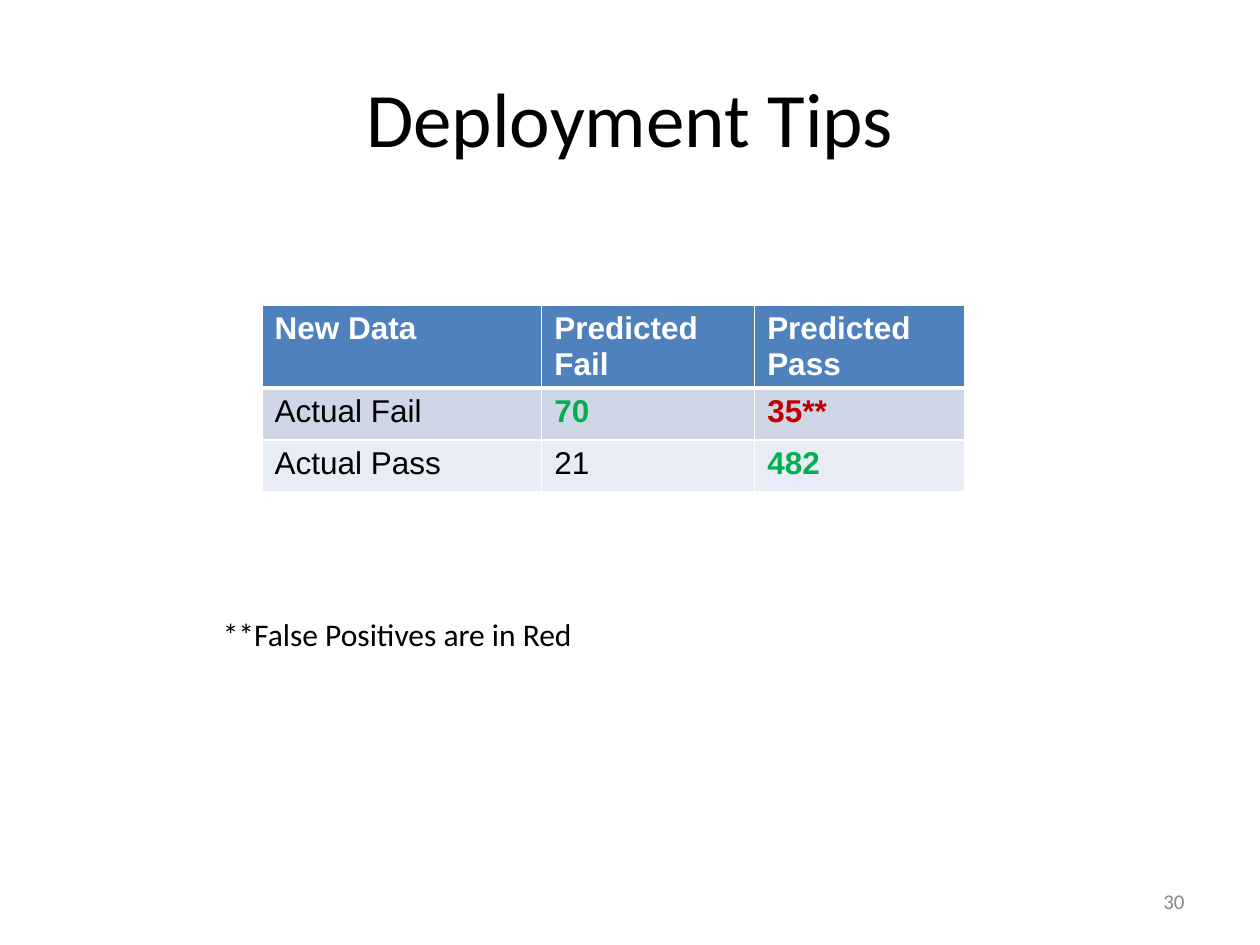
from dataclasses import dataclass

import pptx
import pptx.dml.color
import pptx.enum.text
import pptx.oxml.ns
import pptx.util
from lxml import etree

Inches = pptx.util.Inches
Pt = pptx.util.Pt
RGBColor = pptx.dml.color.RGBColor
Align = pptx.enum.text.PP_ALIGN
Anchor = pptx.enum.text.MSO_ANCHOR

BLACK = RGBColor(0x00, 0x00, 0x00)
WHITE = RGBColor(0xFF, 0xFF, 0xFF)
GRAY = RGBColor(0x88, 0x88, 0x88)
HEADER_BLUE = RGBColor(0x4F, 0x81, 0xBD)
BAND_DARK = RGBColor(0xCF, 0xD7, 0xE7)
BAND_LIGHT = RGBColor(0xE8, 0xEC, 0xF4)
CORRECT_GREEN = RGBColor(0x00, 0xB0, 0x50)
FALSE_POSITIVE_RED = RGBColor(0xC0, 0x00, 0x00)


@dataclass(frozen=True)
class Entry:
    text: str
    color: RGBColor = BLACK
    bold: bool = False


@dataclass(frozen=True)
class Row:
    fill: RGBColor
    height: float
    entries: tuple[Entry, ...]


@dataclass(frozen=True)
class Label:
    text: str
    left: float
    top: float
    width: float
    height: float
    size: int
    color: RGBColor
    align: Align
    anchor: Anchor


COLUMN_WIDTHS = (2.22, 1.69, 1.67)
CONFUSION_MATRIX = (
    Row(HEADER_BLUE, 0.65, tuple(
        Entry(heading, WHITE, True)
        for heading in ("New Data", "Predicted Fail", "Predicted Pass"))),
    Row(BAND_DARK, 0.41, (
        Entry("Actual Fail"),
        Entry("70", CORRECT_GREEN, True),
        Entry("35**", FALSE_POSITIVE_RED, True))),
    Row(BAND_LIGHT, 0.41, (
        Entry("Actual Pass"),
        Entry("21"),
        Entry("482", CORRECT_GREEN, True))),
)
LABELS = (
    Label("30", 7.17, 6.95, 2.33, 0.4, 12, GRAY, Align.RIGHT, Anchor.MIDDLE),
    Label("**False Positives are in Red", 1.67, 4.83, 3, 0.4, 18, BLACK,
          Align.LEFT, Anchor.TOP),
)


def add_run(paragraph, text: str, font: str, size: int, color: RGBColor,
            bold: bool = False) -> None:
    run = paragraph.add_run()
    run.text = text
    run.font.name = font
    run.font.size = Pt(size)
    run.font.bold = bold
    run.font.color.rgb = color


def add_border(cell, side: str, points: float) -> None:
    """Add a white line; sides go in the order L, R, T, B, before the fill."""
    qn = pptx.oxml.ns.qn
    line = etree.SubElement(cell._tc.get_or_add_tcPr(), qn(f"a:ln{side}"),
                            w=str(Pt(points)))
    solid = etree.SubElement(line, qn("a:solidFill"))
    etree.SubElement(solid, qn("a:srgbClr"), val=str(WHITE))


def add_title(slide, text: str) -> None:
    title = slide.shapes.title
    title.left, title.top = Inches(0.5), Inches(0.3)
    title.width, title.height = Inches(9), Inches(1.25)
    title.text_frame.vertical_anchor = Anchor.MIDDLE
    heading = title.text_frame.paragraphs[0]
    heading.alignment = Align.CENTER
    add_run(heading, text, "Calibri", 44, BLACK)


def add_matrix(slide, rows: tuple[Row, ...]) -> None:
    matrix = slide.shapes.add_table(
        len(rows), len(COLUMN_WIDTHS), Inches(2.08), Inches(2.42),
        Inches(sum(COLUMN_WIDTHS)), Inches(sum(row.height for row in rows))).table
    for column, width in zip(matrix.columns, COLUMN_WIDTHS):
        column.width = Inches(width)
    for row_index, row in enumerate(rows):
        matrix.rows[row_index].height = Inches(row.height)
        borders = {"L": 1, "R": 1,
                   "T": 3 if row_index == 1 else 1,
                   "B": 3 if row_index == 0 else 1}
        for column_index, entry in enumerate(row.entries):
            cell = matrix.cell(row_index, column_index)
            for side, points in borders.items():
                add_border(cell, side, points)
            cell.fill.solid()
            cell.fill.fore_color.rgb = row.fill
            add_run(cell.text_frame.paragraphs[0], entry.text, "Arial", 18,
                    entry.color, entry.bold)


def add_label(slide, label: Label) -> None:
    frame = slide.shapes.add_textbox(
        Inches(label.left), Inches(label.top),
        Inches(label.width), Inches(label.height)).text_frame
    frame.word_wrap = True
    frame.vertical_anchor = label.anchor
    paragraph = frame.paragraphs[0]
    paragraph.alignment = label.align
    add_run(paragraph, label.text, "Calibri", label.size, label.color)


def main() -> None:
    deck = pptx.Presentation()
    deck.slide_width, deck.slide_height = Inches(10), Inches(7.5)
    slide = deck.slides.add_slide(deck.slide_layouts[5])
    add_title(slide, "Deployment Tips")
    add_matrix(slide, CONFUSION_MATRIX)
    for label in LABELS:
        add_label(slide, label)
    deck.save("out.pptx")


if __name__ == "__main__":
    main()
